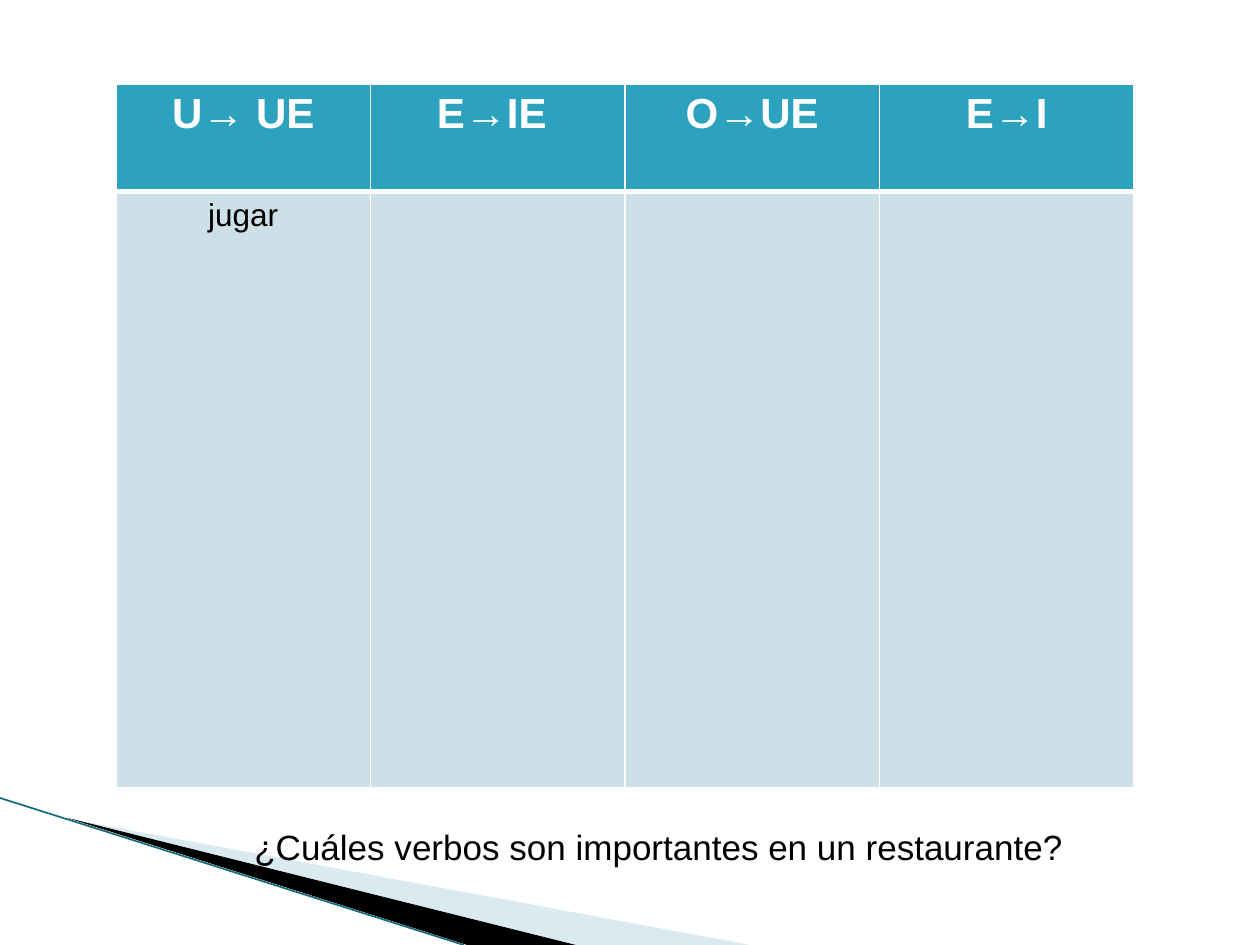
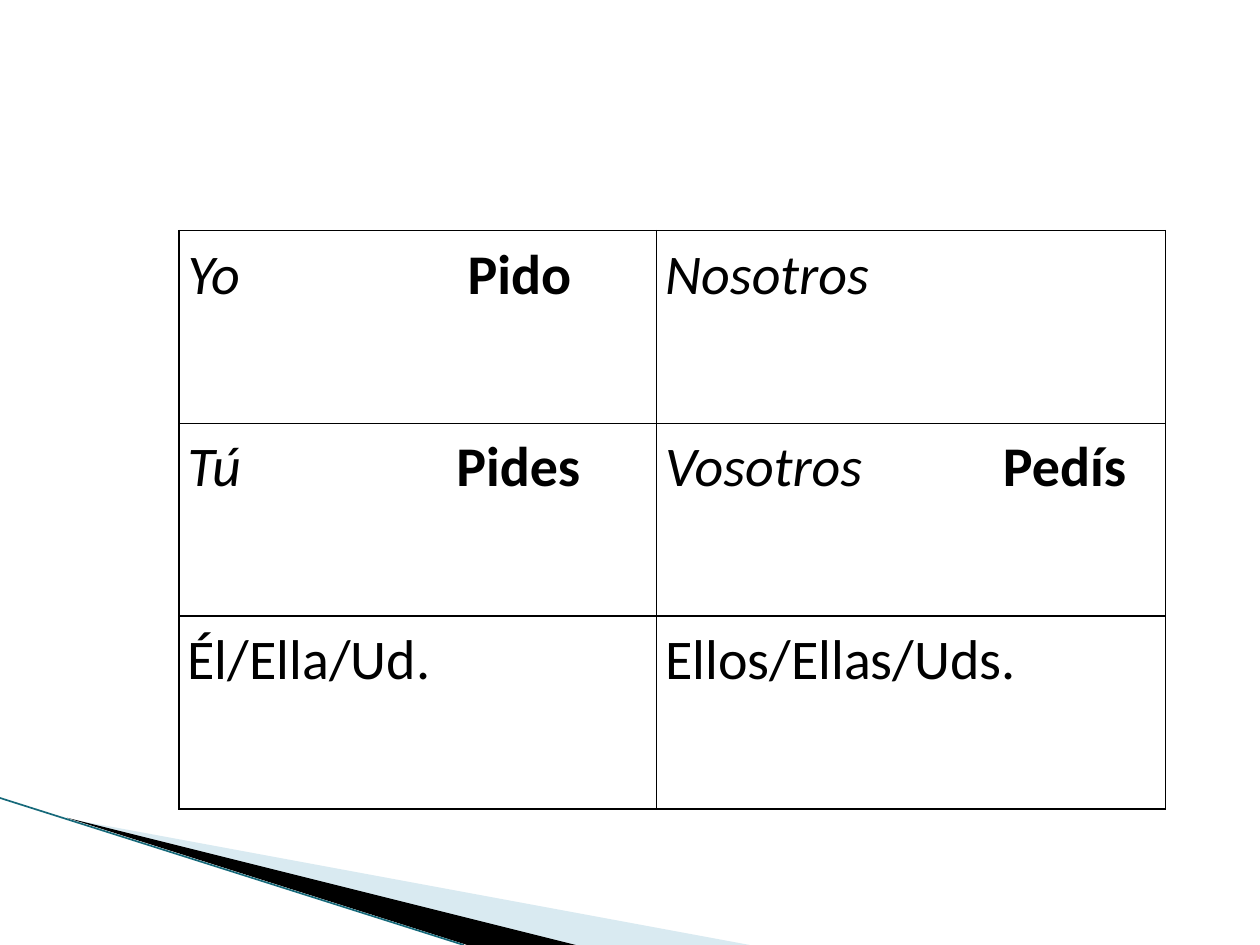
from lxml import etree
from pptx import Presentation
from pptx.dml.color import RGBColor
from pptx.enum.shapes import MSO_CONNECTOR
from pptx.enum.text import PP_ALIGN
from pptx.oxml.ns import qn
from pptx.util import Pt

CENTER, LEFT = PP_ALIGN.CENTER, PP_ALIGN.LEFT
STRAIGHT = MSO_CONNECTOR.STRAIGHT
COLORS = {
    "text": "000000",
    "white": "FFFFFF",
    "header": "2DA2BF",
    "body": "CDE0E8",
    "wedge": "A0CBDC",
    "edge": "16697A",
}


class Deck:
    """Holds the shared style and the current slide."""

    def __init__(self):
        self.presentation = Presentation()
        self.presentation.slide_width = Pt(720)
        self.presentation.slide_height = Pt(540)
        self.slide = None

    def color(self, name):
        return RGBColor.from_string(COLORS[name])

    def new_slide(self):
        self.slide = self.presentation.slides.add_slide(self.presentation.slide_layouts[6])
        self.wedge([(39.6, 468), (428.4, 540), (328.3, 540)], "wedge", 40)
        self.wedge([(38.2, 467.3), (329, 540), (267, 540)], "text")
        self.line((0, 456), (265, 540), "edge", 0.95)

    def wedge(self, points, fill, opacity=100):
        (left, top), *others = [(Pt(x), Pt(y)) for x, y in points]
        builder = self.slide.shapes.build_freeform(left, top)
        builder.add_line_segments(others)
        shape = builder.convert_to_shape()
        shape.shadow.inherit = False
        shape.line.fill.background()
        shape.fill.solid()
        shape.fill.fore_color.rgb = self.color(fill)
        if opacity < 100:
            for tint in shape.fill._xPr.iter(qn("a:srgbClr")):
                etree.SubElement(tint, qn("a:alpha"), val=str(opacity * 1000))

    def line(self, start, end, color, width):
        ends = [Pt(value) for value in start + end]
        connector = self.slide.shapes.add_connector(STRAIGHT, *ends)
        connector.line.color.rgb = self.color(color)
        connector.line.width = Pt(width)
        etree.SubElement(connector._element.spPr, qn("a:effectLst"))

    def format(self, paragraph, font, size, color="text", bold=False, align=LEFT):
        paragraph.alignment = align
        paragraph.font.name = font
        paragraph.font.size = Pt(size)
        paragraph.font.bold = bold
        paragraph.font.color.rgb = self.color(color)

    def text(self, content, left, top, width, height):
        frame = self.slide.shapes.add_textbox(Pt(left), Pt(top), Pt(width), Pt(height)).text_frame
        frame.word_wrap = True
        frame.text = content
        self.format(frame.paragraphs[0], "Arial", 20)

    def table(self, left, top, widths, heights):
        frame = self.slide.shapes.add_table(
            len(heights), len(widths), Pt(left), Pt(top), Pt(sum(widths)), Pt(sum(heights)))
        table = frame.table
        table.first_row = table.horz_banding = False
        for column, width in zip(table.columns, widths):
            column.width = Pt(width)
        for row, height in zip(table.rows, heights):
            row.height = Pt(height)
        return table

    def style_cell(self, cell, border, fill=None, top=1, bottom=1):
        properties = cell._tc.get_or_add_tcPr()
        for side, width in (("L", 1), ("R", 1), ("T", top), ("B", bottom)):
            edge = etree.SubElement(properties, qn(f"a:ln{side}"), w=str(Pt(width)))
            solid = etree.SubElement(edge, qn("a:solidFill"))
            etree.SubElement(solid, qn("a:srgbClr"), val=COLORS[border])
        if fill:
            cell.fill.solid()
            cell.fill.fore_color.rgb = self.color(fill)
        else:
            cell.fill.background()

    def conjugation(self, cell, pronoun, verb="", tab=0, italic=True):
        cell.margin_left = cell.margin_right = Pt(5)
        cell.margin_top = cell.margin_bottom = 0
        paragraph = cell.text_frame.paragraphs[0]
        paragraph.line_spacing = 1.15
        if verb:
            tabs = etree.SubElement(paragraph._p.get_or_add_pPr(), qn("a:tabLst"))
            etree.SubElement(tabs, qn("a:tab"), pos=str(Pt(tab)), algn="l")
        self.format(paragraph, "Calibri", 32)
        subject = paragraph.add_run()
        subject.text = pronoun + ("\t" if verb else "")
        subject.font.italic = italic
        if verb:
            form = paragraph.add_run()
            form.text = verb
            form.font.bold = True


def stem_changes(deck):
    deck.new_slide()
    table = deck.table(66.24, 48.24, [145.44] * 4, [61.2, 340.56])
    changes = ["U→ UE", "E→IE ", "O→UE", "E→I"]
    verbs = ["jugar", "", "", ""]
    for column, (change, verb) in enumerate(zip(changes, verbs)):
        heading, example = table.cell(0, column), table.cell(1, column)
        deck.style_cell(heading, "white", "header", bottom=3)
        deck.style_cell(example, "white", "body", top=3)
        heading.text = change
        deck.format(heading.text_frame.paragraphs[0], "Arial", 24, "white", True, CENTER)
        if verb:
            example.text = verb
            deck.format(example.text_frame.paragraphs[0], "Arial", 18, align=CENTER)
    deck.text("¿Cuáles verbos son importantes en un restaurante?", 138.24, 468, 516, 32)


def pedir_forms(deck):
    deck.new_slide()
    table = deck.table(102.24, 131.76, [272.88, 290.88], [110.16] * 3)
    forms = [
        [("Yo", "Pido", 160), ("Nosotros",)],
        [("Tú", "Pides", 153.5), ("Vosotros", "Pedís", 193)],
        [("Él/Ella/Ud.", "", 0, False), ("Ellos/Ellas/Uds.", "", 0, False)],
    ]
    for row, pair in enumerate(forms):
        for column, form in enumerate(pair):
            cell = table.cell(row, column)
            deck.style_cell(cell, "text")
            deck.conjugation(cell, *form)


def main():
    deck = Deck()
    stem_changes(deck)
    pedir_forms(deck)
    deck.presentation.save("out.pptx")


if __name__ == "__main__":
    main()
